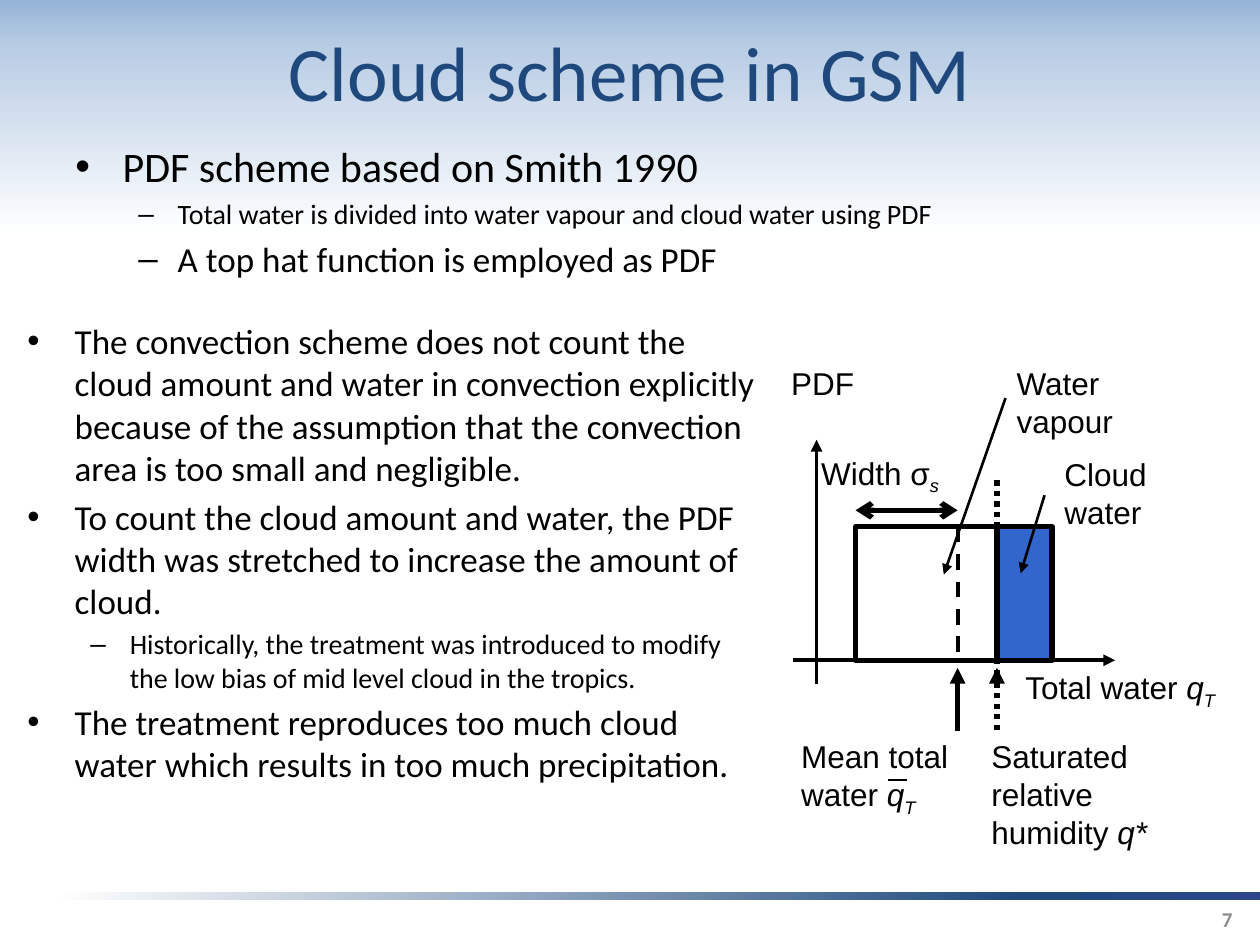
from lxml import etree
from pptx import Presentation
from pptx.dml.color import RGBColor
from pptx.enum import shapes, text
from pptx.oxml import parse_xml
from pptx.oxml.ns import nsdecls, qn
from pptx.util import Pt

BLACK, NAVY, GREY, BLUE = "000000", "1F497D", "8C8C8C", "3366CC"
BODY, LABEL = "Calibri", "Arial"

# Box (left, top, width, height), then paragraphs of (level, size, text)
BULLETS = [
    ((36, 77, 648, 102), [
        (0, 24, "PDF scheme based on Smith 1990"),
        (1, 16, "Total water is divided into water vapour and cloud water using PDF"),
        (1, 20, "A top hat function is employed as PDF"),
    ]),
    ((8.6, 179.3, 430.6, 289.4), [
        (0, 20, "The convection scheme does not count the cloud amount and water in "
                "convection explicitly because of the assumption that the convection "
                "area is too small and negligible."),
        (0, 20, "To count the cloud amount and water, the PDF width was stretched to "
                "increase the amount of cloud."),
        (1, 16, "Historically, the treatment was introduced to modify the low bias of "
                "mid level cloud in the tropics."),
        (0, 20, "The treatment reproduces too much cloud water which results in too "
                "much precipitation."),
    ]),
]
LEVELS = [("•", 27, -27), ("–", 58.5, -22.5)]  # mark, margin, indent

# Box, then plain, italic and italic subscript text
LABELS = [
    ((578.9, 378, 126.7, 29), "Total water ", "q", "T"),
    ((445, 204.5, 96.5, 29), "PDF", "", ""),
    ((450.7, 417.6, 110.2, 51), "Mean total water ", "q", "T"),
    ((601.2, 256.3, 76.3, 51), "Cloud water", "", ""),
    ((462.2, 255.6, 90, 29), "Width σ", "", "s"),
    ((559.4, 417.6, 118, 72.7), "Saturated relative humidity ", "q*", ""),
    ((573.8, 204.5, 87.1, 51), "Water vapour", "", ""),
]

# Landmarks of the top hat diagram
AXIS_X, LEFT, MEAN, SATURATED, RIGHT = 466.6, 488.9, 547.2, 569.7, 601.2
TOP, BASE, WIDTH_Y = 301, 377.3, 291.6
POINTER_TOP, POINTER_END = 381.6, 417.6

HATS = [(LEFT, SATURATED, None), (SATURATED, RIGHT, BLUE)]

# From, to, line width, dash, arrowhead at start, arrowhead at end
LINES = [
    ((AXIS_X, 251.3), (AXIS_X, 391), 2.25, None, "triangle", None),
    ((452.9, BASE), (637.2, BASE), 2.25, None, None, "triangle"),
    ((MEAN, TOP), (MEAN, BASE), 2.25, "dash", None, None),
    ((MEAN, POINTER_TOP), (MEAN, POINTER_END), 3, None, "triangle", None),
    ((SATURATED, POINTER_TOP), (SATURATED, POINTER_END), 3, "sysDot", "triangle", None),
    ((LEFT, WIDTH_Y), (MEAN, WIDTH_Y), 3, None, "arrow", "arrow"),
    ((596.9, 283), (583.2, 327.6), 1.5, None, None, "triangle"),
    ((507.6, 445.7), (518.4, 445.7), 1.5, None, None, None),
    ((SATURATED, 274.5), (SATURATED, 386), 3, "sysDot", None, None),
    ((574.6, 227.5), (539.3, 328.3), 1.5, None, None, "triangle"),
]

SKY = [(0, "95B3D7"), (5, "B9CDE5"), (25, "FFFFFF")]
SKY_SHADE = '<a:lin ang="5400000" scaled="0"/>'
BAR = [(0, "2B468D"), (20, NAVY), (100, "FFFFFF")]
BAR_SHADE = '<a:path path="circle"><a:fillToRect l="100000" t="100000"/></a:path>'


def color(value):
    return RGBColor.from_string(value)


def pts(values):
    return [Pt(v) for v in values]


def set_gradient(fill, parent, stops, shade):
    """Swap the fill inside parent for a gradient with any number of stops."""
    fill.gradient()
    marks = "".join(f'<a:gs pos="{pos * 1000}"><a:srgbClr val="{c}"/></a:gs>'
                    for pos, c in stops)
    old = parent.find(qn("a:gradFill"))
    parent.replace(old, parse_xml(
        f'<a:gradFill {nsdecls("a")} rotWithShape="1"><a:gsLst>{marks}</a:gsLst>'
        f'{shade}</a:gradFill>'))


def add_box(s, box, anchor=text.MSO_ANCHOR.TOP):
    tf = s.shapes.add_textbox(*pts(box)).text_frame
    tf.word_wrap = True
    tf.vertical_anchor = anchor
    return tf


def add_run(p, words, size, name=BODY, fill=BLACK, **more):
    r = p.add_run()
    r.text = words
    for key, value in dict(size=Pt(size), name=name, **more).items():
        setattr(r.font, key, value)
    r.font.color.rgb = color(fill)
    return r


def add_line(s, start, end, width, dash, head, tail):
    sp = s.shapes.add_connector(shapes.MSO_CONNECTOR.STRAIGHT, *pts(start + end))
    sp.line.width = Pt(width)
    sp.line.color.rgb = color(BLACK)
    ln = sp.line._get_or_add_ln()
    for tag, key, value in (("a:prstDash", "val", dash), ("a:headEnd", "type", head),
                            ("a:tailEnd", "type", tail)):
        if value:
            etree.SubElement(ln, qn(tag)).set(key, value)
    etree.SubElement(sp._element.spPr, qn("a:effectLst"))


def add_rect(s, box):
    sp = s.shapes.add_shape(shapes.MSO_SHAPE.RECTANGLE, *pts(box))
    sp.shadow.inherit = False
    return sp


def add_bullets(s, box, items):
    tf = add_box(s, box)
    for i, (level, size, words) in enumerate(items):
        p = tf.add_paragraph() if i else tf.paragraphs[0]
        mark, margin, indent = LEVELS[level]
        p.level = level
        p.space_before = Pt(0.2 * size if i else 0)
        pPr = p._p.get_or_add_pPr()
        pPr.set("marL", str(Pt(margin)))
        pPr.set("indent", str(Pt(indent)))
        etree.SubElement(pPr, qn("a:buFont")).set("typeface", LABEL)
        etree.SubElement(pPr, qn("a:buChar")).set("char", mark)
        add_run(p, words, size)


def add_label(s, box, plain, italic, subscript):
    p = add_box(s, box).paragraphs[0]
    add_run(p, plain, 18, LABEL)
    if italic:
        add_run(p, italic, 18, LABEL, italic=True)
    if subscript:
        r = add_run(p, subscript, 18, LABEL, italic=True)
        r._r.get_or_add_rPr().set("baseline", "-25000")


def main():
    prs = Presentation()
    prs.slide_width, prs.slide_height = Pt(720), Pt(540)
    s = prs.slides.add_slide(prs.slide_layouts[6])
    fill = s.background.fill
    set_gradient(fill, s._element.cSld.bg.bgPr, SKY, SKY_SHADE)

    bar = add_rect(s, (33, 510.2, 687, 4))
    bar.line.fill.background()
    set_gradient(bar.fill, bar._element.spPr, BAR, BAR_SHADE)

    middle = text.MSO_ANCHOR.MIDDLE
    p = add_box(s, (36, 4.3, 648, 72.7), middle).paragraphs[0]
    p.alignment = text.PP_ALIGN.CENTER
    add_run(p, "Cloud scheme in GSM", 44, fill=NAVY)
    p = add_box(s, (660.2, 514, 51.1, 22.3), middle).paragraphs[0]
    p.alignment = text.PP_ALIGN.RIGHT
    add_run(p, "7", 12, fill=GREY, bold=True)

    for box, items in BULLETS:
        add_bullets(s, box, items)
    for left, right, inside in HATS:
        sp = add_rect(s, (left, TOP, right - left, BASE - TOP))
        if inside:
            sp.fill.solid()
            sp.fill.fore_color.rgb = color(inside)
        else:
            sp.fill.background()
        sp.line.color.rgb = color(BLACK)
        sp.line.width = Pt(3)
    for line in LINES:
        add_line(s, *line)
    for label in LABELS:
        add_label(s, *label)
    prs.save("out.pptx")


if __name__ == "__main__":
    main()
